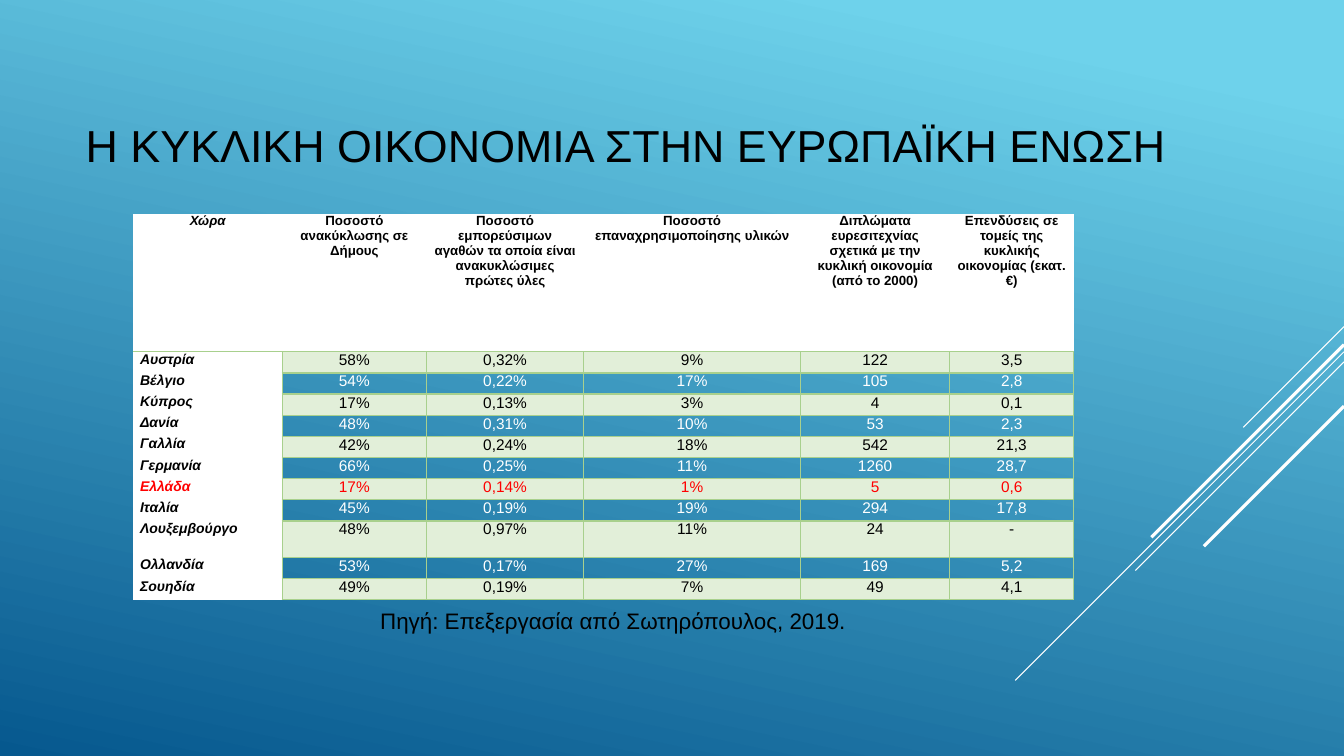
from lxml import etree
from pptx import Presentation
from pptx.dml.color import RGBColor as RGB
from pptx.enum.shapes import MSO_CONNECTOR as Conn
from pptx.enum.text import MSO_ANCHOR as Anchor, PP_ALIGN as Align
from pptx.oxml.ns import qn
from pptx.util import Inches, Pt

COLORS = {"sky": "6ED2EB", "deep": "06588E", "white": "FFFFFF", "black": "000000",
          "red": "FF0000", "band": "E2EFD9", "border": "A8D08D"}
FONT = "Arial"
NO_STYLE = "{2D5ABB26-0587-4C30-8999-92F81FD0307C}"

HEADERS = ["Χώρα", "Ποσοστό ανακύκλωσης σε Δήμους",
           "Ποσοστό εμπορεύσιμων αγαθών τα οποία είναι ανακυκλώσιμες πρώτες ύλες",
           "Ποσοστό επαναχρησιμοποίησης υλικών",
           "Διπλώματα ευρεσιτεχνίας σχετικά με την κυκλική οικονομία (από το 2000)",
           "Επενδύσεις σε τομείς της κυκλικής οικονομίας (εκατ. €)"]
COUNTRIES = [
    ["Αυστρία", "58%", "0,32%", "9%", "122", "3,5"],
    ["Βέλγιο", "54%", "0,22%", "17%", "105", "2,8"],
    ["Κύπρος", "17%", "0,13%", "3%", "4", "0,1"],
    ["Δανία", "48%", "0,31%", "10%", "53", "2,3"],
    ["Γαλλία", "42%", "0,24%", "18%", "542", "21,3"],
    ["Γερμανία", "66%", "0,25%", "11%", "1260", "28,7"],
    ["Ελλάδα", "17%", "0,14%", "1%", "5", "0,6"],
    ["Ιταλία", "45%", "0,19%", "19%", "294", "17,8"],
    ["Λουξεμβούργο", "48%", "0,97%", "11%", "24", "-"],
    ["Ολλανδία", "53%", "0,17%", "27%", "169", "5,2"],
    ["Σουηδία", "49%", "0,19%", "7%", "49", "4,1"],
]
HIGHLIGHT = "Ελλάδα"
COL_WIDTHS = [1.48, 1.43, 1.56, 2.15, 1.48, 1.23]
ROW_HEIGHTS = [1.37] + [0.36 if row[0] == "Λουξεμβούργο" else 0.21 for row in COUNTRIES]

# Diagonal lines: y at the right edge, horizontal run, width
DIAGONALS = [(3.24, 1, 0.75), (3.49, 3.26, 0.75), (3.59, 2.07, 0.75),
             (3.42, 1.91, 2.25), (4.03, 1.39, 2.25)]


class SlideBuilder:
    def __init__(self, prs):
        self.width = prs.slide_width
        self.s = prs.slides.add_slide(prs.slide_layouts[1])

    def color(self, name):
        return RGB.from_string(COLORS[name])

    def background(self):
        fill = self.s.background.fill
        fill.gradient()
        fill.gradient_angle = 258
        for stop, pos, name in zip(fill.gradient_stops, (0.1, 1), ("sky", "deep")):
            stop.position = pos
            stop.color.rgb = self.color(name)

    def format(self, p, size, color, align, bold=False, italic=False):
        p.alignment = align
        f = p.font
        f.name, f.size, f.bold, f.italic = FONT, Pt(size), bold, italic
        f.color.rgb = self.color(color)

    def placeholder(self, idx, text, box, size, align, anchor):
        sp = self.s.placeholders[idx]
        sp.left, sp.top, sp.width, sp.height = map(Inches, box)
        tf = sp.text_frame
        tf.text = text
        tf.word_wrap = True
        tf.vertical_anchor = anchor
        p = tf.paragraphs[0]
        self.format(p, size, "black", align)
        return tf

    def diagonal(self, y, run, width):
        line = self.s.shapes.add_connector(Conn.STRAIGHT, self.width, Inches(y),
                                           self.width - Inches(run), Inches(y + run))
        line.line.color.rgb = self.color("white")
        line.line.width = Pt(width)
        etree.SubElement(line._element.spPr, qn("a:effectLst"))

    def borders(self, cell, sides):
        tc_pr = cell._tc.get_or_add_tcPr()
        for i, side in enumerate("LRTB"):
            ln = etree.Element(qn(f"a:ln{side}"), w=str(Pt(1)))
            if side in sides:
                fill = etree.SubElement(ln, qn("a:solidFill"))
                etree.SubElement(fill, qn("a:srgbClr"), val=COLORS["border"])
            else:
                etree.SubElement(ln, qn("a:noFill"))
            tc_pr.insert(i, ln)

    def cell(self, cell, text, fill, sides, **font):
        cell.margin_left = cell.margin_right = Inches(0.07)
        cell.margin_top = cell.margin_bottom = 0
        cell.text = text
        p = cell.text_frame.paragraphs[0]
        p.space_after = Pt(8)
        self.format(p, **font)
        if fill:
            cell.fill.solid()
            cell.fill.fore_color.rgb = self.color(fill)
        else:
            cell.fill.background()
        self.borders(cell, sides)

    def table(self, left, top):
        box = map(Inches, (left, top, sum(COL_WIDTHS), sum(ROW_HEIGHTS)))
        t = self.s.shapes.add_table(len(ROW_HEIGHTS), len(COL_WIDTHS), *box).table
        t.first_row = t.horz_banding = False
        t._tbl.tblPr.find(qn("a:tableStyleId")).text = NO_STYLE
        for col, width in zip(t.columns, COL_WIDTHS):
            col.width = Inches(width)
        for row, height in zip(t.rows, ROW_HEIGHTS):
            row.height = Inches(height)
        # Header row
        for c, text in enumerate(HEADERS):
            self.cell(t.cell(0, c), text, "white", "B", size=9.5, color="black",
                      align=Align.CENTER, bold=True, italic=c == 0)
        # Country rows, every other one banded
        for r, (country, *values) in enumerate(COUNTRIES, 1):
            banded = r % 2 == 1
            ink = "red" if country == HIGHLIGHT else "black"
            self.cell(t.cell(r, 0), country, "white", "RT" if r == 1 else "R", size=10,
                      color=ink, align=Align.JUSTIFY, bold=True, italic=True)
            for c, value in enumerate(values, 1):
                self.cell(t.cell(r, c), value, "band" if banded else None, "LRTB", size=11,
                          color=ink if banded else "white", align=Align.CENTER)


def main():
    prs = Presentation()
    prs.slide_width, prs.slide_height = Inches(13.33), Inches(7.5)
    b = SlideBuilder(prs)
    b.background()

    # Decorative lines on the right
    for diagonal in DIAGONALS:
        b.diagonal(*diagonal)

    # Title and source note
    b.placeholder(0, "Η ΚΥΚΛΙΚΗ ΟΙΚΟΝΟΜΙΑ ΣΤΗΝ ΕΥΡΩΠΑΪΚΗ ΕΝΩΣΗ", (0.75, 0.75, 11, 1.37),
                  32, Align.LEFT, Anchor.MIDDLE)
    note = b.placeholder(1, "Πηγή: Επεξεργασία από Σωτηρόπουλος, 2019.",
                         (0.75, 1.96, 10.66, 4.59), 16, Align.CENTER, Anchor.BOTTOM)
    note.margin_bottom = Inches(0.26)
    p_pr = note.paragraphs[0]._p.get_or_add_pPr()
    p_pr.set("marL", "0")
    p_pr.set("indent", "0")
    p_pr.insert(0, etree.Element(qn("a:buNone")))

    # Country table
    b.table(1.32, 2.12)
    prs.save("out.pptx")


if __name__ == "__main__":
    main()
